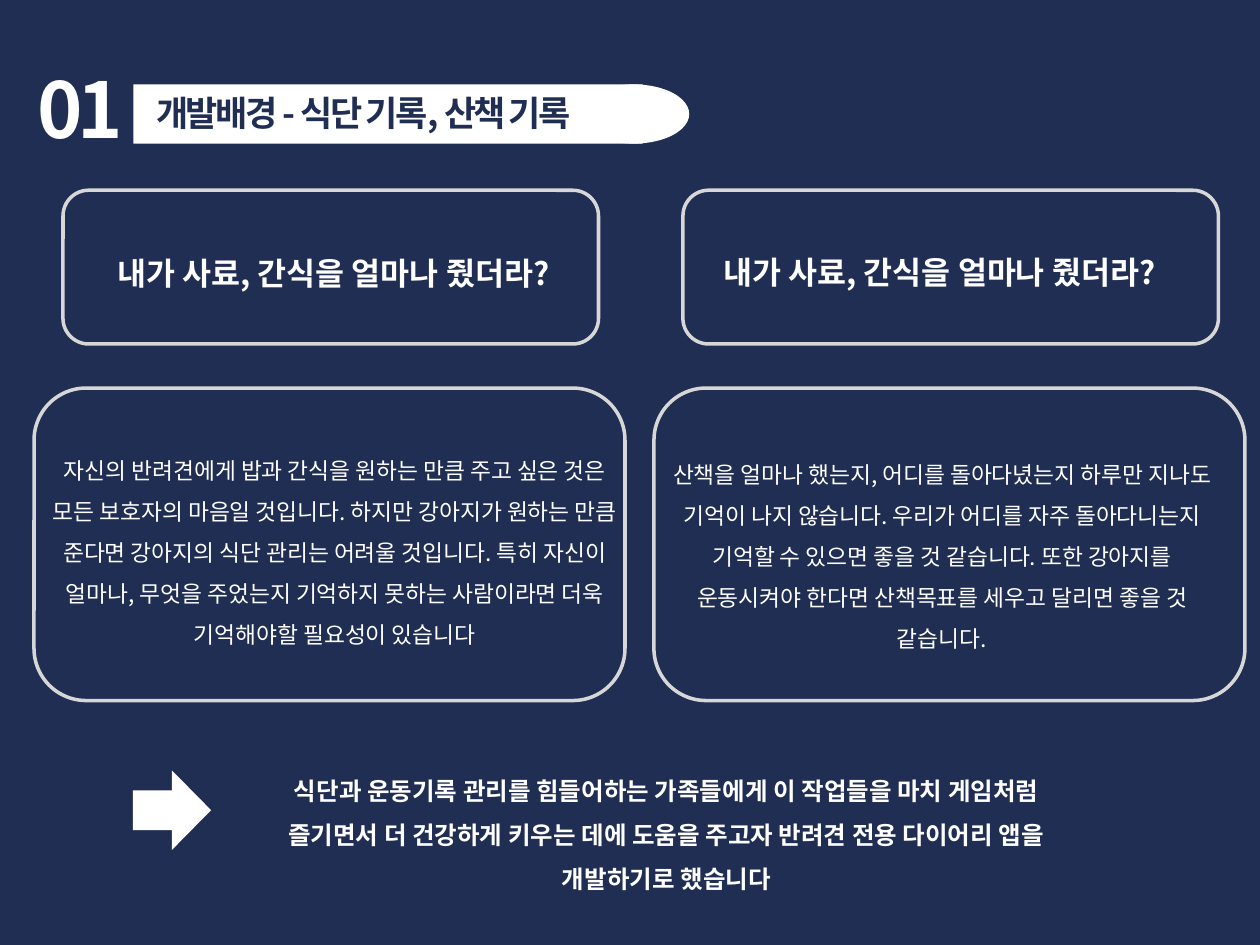
from dataclasses import dataclass

from lxml import etree
from pptx import Presentation
from pptx import util as u
from pptx.dml.color import RGBColor
from pptx.enum import shapes, text
from pptx.oxml.ns import qn

FONT = "Noto Sans CJK KR"
COLORS = {"navy": "212E53", "white": "FFFFFF", "border": "D7D7D7"}
CARD_PITCH = 4.92
SHAPE = shapes.MSO_SHAPE


@dataclass(frozen=True)
class Box:
    left: float
    top: float
    width: float
    height: float

    def lengths(self) -> list:
        """Return the four sides as lengths."""
        return [u.Inches(side) for side in (self.left, self.top, self.width, self.height)]


@dataclass(frozen=True)
class Label:
    box: Box
    wording: str
    size: float
    bold: bool = True
    color: str = "white"
    centered: bool = True
    tracking: float = 0


@dataclass(frozen=True)
class Figure:
    kind: SHAPE
    box: Box
    fill: str = ""
    rotation: float = 0


def rgb(name: str) -> RGBColor:
    """Look up a named colour."""
    return RGBColor.from_string(COLORS[name])


def draw_label(slide, label: Label) -> None:
    """Draw one block of text."""
    frame = slide.shapes.add_textbox(*label.box.lengths()).text_frame
    frame.word_wrap = True
    frame.auto_size = text.MSO_AUTO_SIZE.SHAPE_TO_FIT_TEXT
    paragraph = frame.paragraphs[0]
    if label.centered:
        paragraph.alignment = text.PP_ALIGN.CENTER
        paragraph.line_spacing = 1.5
    run = paragraph.add_run()
    run.text = label.wording
    styles = {"name": FONT, "size": u.Pt(label.size), "bold": label.bold}
    for attribute, value in styles.items():
        setattr(run.font, attribute, value)
    run.font.color.rgb = rgb(label.color)
    properties = run._r.get_or_add_rPr()
    etree.SubElement(properties, qn("a:ea")).set("typeface", FONT)
    if label.tracking:
        properties.set("spc", str(int(label.tracking * 100)))


def draw_figure(parent, figure: Figure) -> None:
    """Draw a filled figure, or an outlined one when it has no fill."""
    shape = parent.add_shape(figure.kind, *figure.box.lengths())
    shape.shadow.inherit = False
    shape.rotation = figure.rotation
    if figure.fill:
        shape.fill.solid()
        shape.fill.fore_color.rgb = rgb(figure.fill)
        shape.line.fill.background()
    else:
        shape.fill.background()
        shape.line.color.rgb = rgb("border")
        shape.line.width = u.Pt(2)


BANNER = [
    Figure(SHAPE.RECTANGLE, Box(1.06, 0.67, 4.04, 0.47), "white"),
    Figure(SHAPE.OVAL, Box(4.59, 0.67, 0.88, 0.47), "white"),
]
CARDS = [
    Figure(SHAPE.ROUNDED_RECTANGLE, Box(left + column * CARD_PITCH, top, width, height))
    for left, top, width, height in ((0.5, 1.51, 4.25, 1.22), (0.27, 3.08, 4.69, 2.48))
    for column in range(2)
]
ARROW = Figure(SHAPE.DOWN_ARROW, Box(1.05, 6.12, 0.63, 0.62), "white", 270)

QUESTION = "내가 사료, 간식을 얼마나 줬더라?"
DIET = (
    "자신의 반려견에게 밥과 간식을 원하는 만큼 주고 싶은 것은 모든 보호자의 마음일 것입니다. "
    "하지만 강아지가 원하는 만큼 준다면 강아지의 식단 관리는 어려울 것입니다. "
    "특히 자신이 얼마나, 무엇을 주었는지 기억하지 못하는 사람이라면 더욱 기억해야할 필요성이 있습니다"
)
WALK = (
    "산책을 얼마나 했는지, 어디를 돌아다녔는지 하루만 지나도 기억이 나지 않습니다. "
    "우리가 어디를 자주 돌아다니는지 기억할 수 있으면 좋을 것 같습니다. "
    "또한 강아지를 운동시켜야 한다면 산책목표를 세우고 달리면 좋을 것 같습니다."
)
GOAL = (
    "식단과 운동기록 관리를 힘들어하는 가족들에게 이 작업들을 마치 게임처럼 즐기면서 "
    "더 건강하게 키우는 데에 도움을 주고자 반려견 전용 다이어리 앱을 개발하기로 했습니다"
)
LABELS = [
    Label(Box(0.2, 0.44, 1.1, 0.84), "01", 44, centered=False, tracking=-3),
    Label(Box(1.14, 0.68, 4.85, 0.44), "개발배경 - 식단 기록, 산책 기록", 20,
          color="navy", centered=False, tracking=-1.5),
    Label(Box(0.6, 1.82, 4.09, 0.5), QUESTION, 18),
    Label(Box(5.41, 1.81, 4.09, 0.5), QUESTION, 18),
    Label(Box(0.31, 3.47, 4.69, 1.7), DIET, 13, bold=False),
    Label(Box(5.13, 3.5, 4.69, 1.7), WALK, 13, bold=False),
    Label(Box(1.87, 5.99, 6.84, 1.12), GOAL, 14),
]


def main() -> None:
    """Build and save the slide."""
    deck = Presentation()
    deck.slide_width, deck.slide_height = u.Inches(10), u.Inches(7.5)
    slide = deck.slides.add_slide(deck.slide_layouts[6])
    slide.background.fill.solid()
    slide.background.fill.fore_color.rgb = rgb("navy")
    banner = slide.shapes.add_group_shape()
    for figure in BANNER:
        draw_figure(banner.shapes, figure)
    for figure in [*CARDS, ARROW]:
        draw_figure(slide.shapes, figure)
    for label in LABELS:
        draw_label(slide, label)
    deck.save("out.pptx")


if __name__ == "__main__":
    main()
